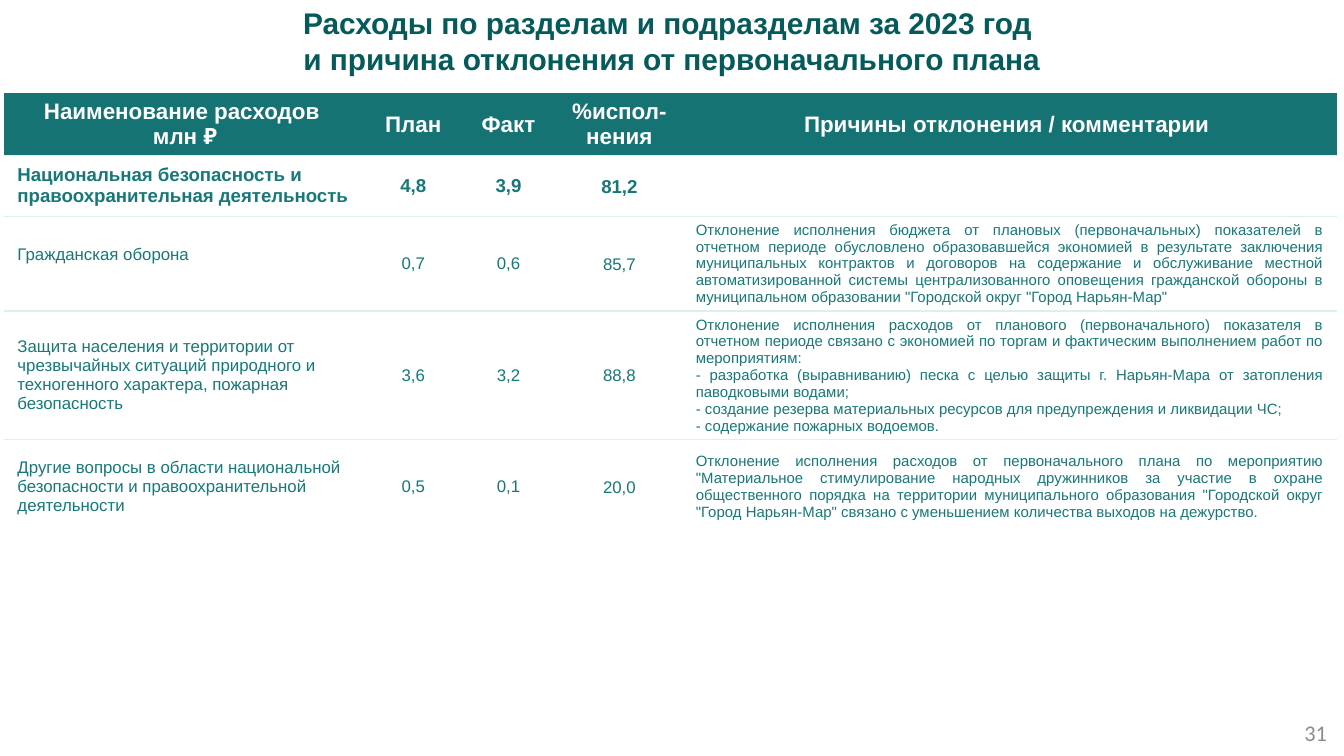
from lxml import etree
from pptx import Presentation
from pptx.dml.color import RGBColor
from pptx.enum import text
from pptx.oxml.ns import qn
from pptx.util import Cm, Pt

TITLE_COLOR = "055A5A"
HEADER_FILL = "167373"
BODY_COLOR = "167878"
LINE_COLOR = "DCF0F0"
NO_GRID_STYLE = "{2D5ABB26-0587-4C30-8999-92F81FD0307C}"

LEFT, CENTER = text.PP_ALIGN.LEFT, text.PP_ALIGN.CENTER
RIGHT, JUSTIFY = text.PP_ALIGN.RIGHT, text.PP_ALIGN.JUSTIFY

COLUMN_WIDTHS = [6.83, 1.8, 1.8, 2.39, 12.37]
ROW_HEIGHTS = [1.18, 1.15, 1.78, 2.42, 1.78]
PERCENT_COLUMN, COMMENT_COLUMN = 3, 4

HEADERS = [
    ["Наименование расходов ", "млн ₽"],
    ["План"],
    ["Факт"],
    ["%испол-нения"],
    ["Причины отклонения / комментарии "],
]
EXPENSES = [
    (["Национальная безопасность и правоохранительная деятельность"],
     ["4,8"], ["3,9"], ["81,2"], []),
    (["Гражданская оборона"], ["0,7"], ["0,6"], ["85,7"],
     ["Отклонение исполнения бюджета от плановых (первоначальных) показателей в "
      "отчетном периоде обусловлено образовавшейся экономией в результате заключения "
      "муниципальных контрактов и договоров на содержание и обслуживание местной "
      "автоматизированной системы централизованного оповещения гражданской обороны в "
      'муниципальном образовании "Городской округ "Город Нарьян-Мар"']),
    (["Защита населения и территории от чрезвычайных ситуаций природного и "
      "техногенного характера, пожарная безопасность"], ["3,6"], ["3,2"], ["88,8"],
     ["Отклонение исполнения расходов от планового (первоначального) показателя в "
      "отчетном периоде связано с экономией по торгам и фактическим выполнением работ "
      "по мероприятиям: ",
      "- разработка (выравниванию) песка с целью защиты г. Нарьян-Мара от затопления "
      "паводковыми водами; ",
      "- создание резерва материальных ресурсов для предупреждения и ликвидации ЧС; ",
      "- содержание пожарных водоемов."]),
    (["Другие вопросы в области национальной безопасности и правоохранительной "
      "деятельности"], ["0,5"], ["0,1"], ["20,0"],
     ["Отклонение исполнения расходов от первоначального плана по мероприятию "
      '"Материальное стимулирование народных дружинников за участие в охране '
      "общественного порядка на территории муниципального образования "
      '"Городской округ "Город Нарьян-Мар" связано с уменьшением количества выходов '
      "на дежурство."]),
]


def rgb(value):
    """Turn a hex string into a colour."""
    return RGBColor.from_string(value)


def write(frame, lines, size, color, align, bold=False, font="Arial"):
    """Fill a text frame with one paragraph per line."""
    for index, line in enumerate(lines):
        paragraph = frame.add_paragraph() if index else frame.paragraphs[0]
        paragraph.alignment = align
        run = paragraph.add_run()
        run.text = line
        run.font.name = font
        run.font.size = Pt(size)
        run.font.bold = bold
        run.font.color.rgb = rgb(color)


def add_text(slide, box, lines, size, color, align, **style):
    """Add a wrapped, vertically centred text box."""
    frame = slide.shapes.add_textbox(*(Cm(length) for length in box)).text_frame
    frame.word_wrap = True
    frame.vertical_anchor = text.MSO_ANCHOR.MIDDLE
    write(frame, lines, size, color, align, **style)


def add_rule(cell, side):
    """Draw a thin line along one side of a cell."""
    properties = cell._tc.get_or_add_tcPr()
    line = etree.Element(qn(f"a:{side}"), w=str(Pt(1)))
    fill = etree.SubElement(line, qn("a:solidFill"))
    etree.SubElement(fill, qn("a:srgbClr"), val=LINE_COLOR)
    properties.insert(0, line)


def set_margins(cell, side, top, bottom):
    """Set the inner margins of a cell in centimetres."""
    cell.margin_left = cell.margin_right = Cm(side)
    cell.margin_top, cell.margin_bottom = Cm(top), Cm(bottom)


def fill_cell(cell, row, column, lines):
    """Style a cell by its place in the table and write its text."""
    is_header, is_total = row == 0, row == 1
    cell.vertical_anchor = text.MSO_ANCHOR.MIDDLE
    if column == PERCENT_COLUMN and not is_header:
        set_margins(cell, 0.03, 0.03, 0)
    else:
        set_margins(cell, 0.25, 0.1, 0.1)
    if is_header:
        cell.fill.solid()
        cell.fill.fore_color.rgb = rgb(HEADER_FILL)
        write(cell.text_frame, lines, 12, "FFFFFF", CENTER, bold=True)
    else:
        size = 10 if is_total else 8 if column == COMMENT_COLUMN else 9
        align = {0: LEFT, COMMENT_COLUMN: JUSTIFY}.get(column, CENTER)
        cell.fill.background()
        write(cell.text_frame, lines, size, BODY_COLOR, align, bold=is_total)
    if row > 0:
        add_rule(cell, "lnT")
    if row < len(EXPENSES):
        add_rule(cell, "lnB") if row == 0 else cell._tc.tcPr.insert(1, bottom_rule(cell))


def bottom_rule(cell):
    """Return a bottom line that matches the top line of a cell."""
    line = etree.Element(qn("a:lnB"), w=str(Pt(1)))
    fill = etree.SubElement(line, qn("a:solidFill"))
    etree.SubElement(fill, qn("a:srgbClr"), val=LINE_COLOR)
    return line


def add_expense_table(slide):
    """Add the table of planned and actual expenses."""
    rows = [HEADERS, *EXPENSES]
    table = slide.shapes.add_table(
        len(rows), len(HEADERS), Cm(0.08), Cm(1.76),
        Cm(sum(COLUMN_WIDTHS)), Cm(sum(ROW_HEIGHTS))).table
    table.horz_banding = False
    table._tbl.tblPr.find(qn("a:tableStyleId")).text = NO_GRID_STYLE
    for column, width in zip(table.columns, COLUMN_WIDTHS):
        column.width = Cm(width)
    for row, height in zip(table.rows, ROW_HEIGHTS):
        row.height = Cm(height)
    for row, values in enumerate(rows):
        for column, lines in enumerate(values):
            fill_cell(table.cell(row, column), row, column, lines)
    set_margins(table.cell(2, 0), 0.25, 0.1, 0.45)


def main():
    """Build the slide and save the presentation."""
    presentation = Presentation()
    presentation.slide_width, presentation.slide_height = Cm(25.4), Cm(14.29)
    slide = presentation.slides.add_slide(presentation.slide_layouts[6])
    add_expense_table(slide)
    add_text(slide, (19.4, 13.46, 5.93, 0.76), ["31"], 12, "8C8C8C", RIGHT,
             font="Calibri")
    add_text(slide, (0, 0, 25.4, 1.55),
             ["Расходы по разделам и подразделам за 2023 год ",
              "и причина отклонения от первоначального плана"],
             16, TITLE_COLOR, CENTER, bold=True)
    presentation.save("out.pptx")


if __name__ == "__main__":
    main()
